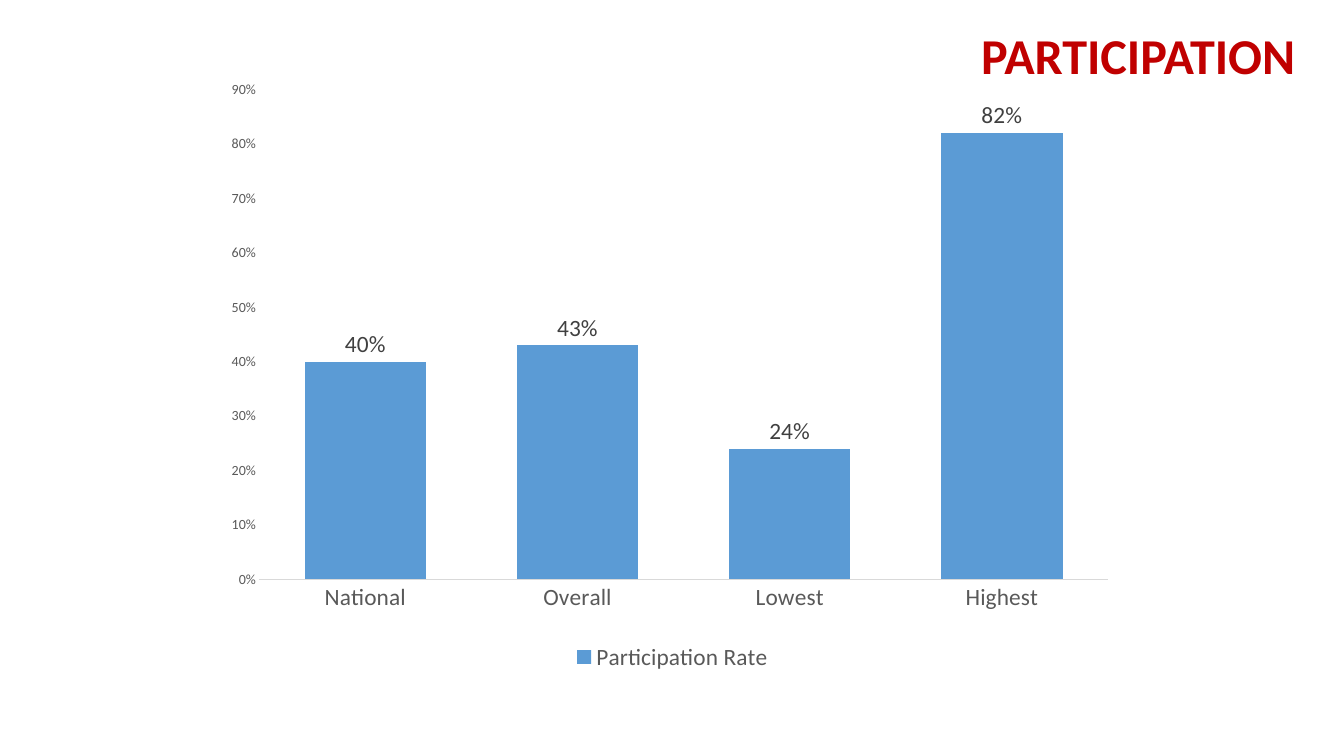
from pptx import Presentation
from pptx.chart.data import CategoryChartData
from pptx.dml.color import RGBColor
from pptx.enum.chart import (XL_CHART_TYPE as ChartType, XL_LABEL_POSITION as LabelPosition,
                             XL_LEGEND_POSITION as LegendPosition, XL_TICK_MARK as TickMark)
from pptx.enum.text import MSO_ANCHOR, MSO_AUTO_SIZE, PP_ALIGN
from pptx.oxml import parse_xml
from pptx.oxml.ns import nsdecls
from pptx.util import Inches, Pt

RED = RGBColor(0xC0, 0x00, 0x00)
BLUE = RGBColor(0x5B, 0x9B, 0xD5)
BLACK = RGBColor(0x00, 0x00, 0x00)
LABEL_GRAY = RGBColor(0x40, 0x40, 0x40)
AXIS_GRAY = RGBColor(0x59, 0x59, 0x59)
LINE_GRAY = RGBColor(0xD9, 0xD9, 0xD9)


def set_font(font, size, color, bold=False):
    font.name = "Calibri"
    font.size = Pt(size)
    font.bold = bold
    font.color.rgb = color


def write(frame, text, size, color, bold=False, align=PP_ALIGN.LEFT):
    frame.word_wrap = True
    frame.auto_size = MSO_AUTO_SIZE.NONE
    frame.vertical_anchor = MSO_ANCHOR.TOP
    paragraph = frame.paragraphs[0]
    paragraph.alignment = align
    run = paragraph.add_run()
    run.text = text
    set_font(run.font, size, color, bold)


prs = Presentation()
prs.slide_width = Inches(16)
prs.slide_height = Inches(9)
slide = prs.slides.add_slide(prs.slide_layouts[5])

# Title
title = slide.shapes.title
title.left, title.top = Inches(9.4), Inches(0.24)
title.width, title.height = Inches(6.12), Inches(0.82)
write(title.text_frame, "PARTICIPATION", size=43, color=RED, bold=True, align=PP_ALIGN.RIGHT)

# Participation chart
rates = CategoryChartData(number_format="0%")
rates.categories = ["National", "Overall", "Lowest", "Highest"]
rates.add_series("Participation Rate", [0.4, 0.43, 0.24, 0.82])
chart = slide.shapes.add_chart(ChartType.COLUMN_CLUSTERED, Inches(2.67), Inches(0.94),
                               Inches(10.67), Inches(7.11), rates).chart
chart.has_title = False
set_font(chart.font, 10, BLACK)

# Columns and their labels
columns = chart.plots[0]
columns.gap_width = 75
columns.vary_by_categories = False
participation = columns.series[0]
participation.format.fill.solid()
participation.format.fill.fore_color.rgb = BLUE
labels = participation.data_labels
labels.show_value = True
labels.number_format = "0%"
labels.number_format_is_linked = False
labels.position = LabelPosition.OUTSIDE_END
set_font(labels.font, 20, LABEL_GRAY)

# Axes
for axis, size in ((chart.category_axis, 20), (chart.value_axis, 12)):
    axis.has_major_gridlines = False
    axis.major_tick_mark = TickMark.NONE
    axis.minor_tick_mark = TickMark.NONE
    set_font(axis.tick_labels.font, size, AXIS_GRAY)
chart.category_axis.format.line.color.rgb = LINE_GRAY
chart.category_axis.format.line.width = Pt(0.75)
rate_axis = chart.value_axis
rate_axis.format.line.fill.background()
rate_axis.minimum_scale, rate_axis.maximum_scale = 0, 0.9
rate_axis.major_unit = 0.1
rate_axis.tick_labels.number_format = "0%"
rate_axis.tick_labels.number_format_is_linked = False

# Legend
chart.has_legend = True
chart.legend.position = LegendPosition.BOTTOM
chart.legend.include_in_layout = False
set_font(chart.legend.font, 20, AXIS_GRAY)

# Plot area as fractions of the chart
plot_area = chart.element.find(".//{*}plotArea")
for layout in plot_area.findall("{*}layout"):
    plot_area.remove(layout)
plot_area.insert(0, parse_xml(
    f'<c:layout {nsdecls("c")}><c:manualLayout><c:layoutTarget val="inner"/>'
    '<c:xMode val="edge"/><c:yMode val="edge"/><c:x val="0.039"/><c:y val="0.018"/>'
    '<c:w val="0.947"/><c:h val="0.82"/></c:manualLayout></c:layout>'))

prs.save("out.pptx")
